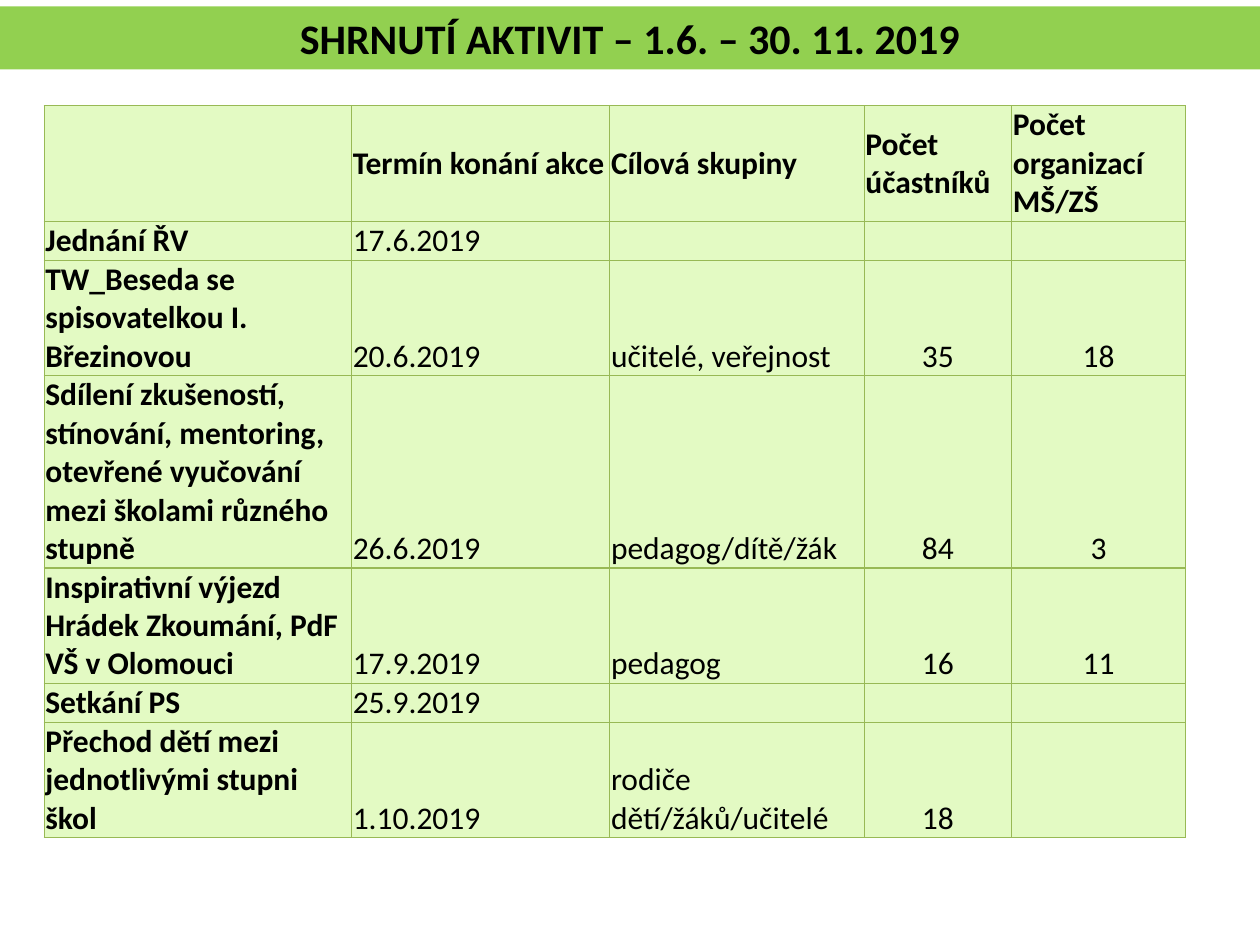
from lxml.etree import SubElement
from pptx import Presentation
from pptx.dml.color import RGBColor
from pptx.enum.text import MSO_ANCHOR as ANCHOR, MSO_AUTO_SIZE as AUTO, PP_ALIGN as ALIGN
from pptx.oxml.ns import qn
from pptx.util import Inches, Pt

# Content
TITLE = "SHRNUTÍ AKTIVIT – 1.6. – 30. 11. 2019"
HEADER = ("", "Termín konání akce", "Cílová skupiny", "Počet účastníků",
          "Počet organizací MŠ/ZŠ")
ACTIVITIES = [
    ("Jednání ŘV", "17.6.2019", "", "", ""),
    ("TW_Beseda se spisovatelkou I. Březinovou", "20.6.2019",
     "učitelé, veřejnost", "35", "18"),
    ("Sdílení zkušeností, stínování, mentoring, otevřené vyučování mezi školami "
     "různého stupně", "26.6.2019", "pedagog/dítě/žák", "84", "3"),
    ("Inspirativní výjezd Hrádek Zkoumání, PdF VŠ v Olomouci", "17.9.2019",
     "pedagog", "16", "11"),
    ("Setkání PS", "25.9.2019", "", "", ""),
    ("Přechod dětí mezi jednotlivými stupni škol", "1.10.2019",
     "rodiče dětí/žáků/učitelé", "18", ""),
]
COL_WIDTHS = (2.44, 2.05, 2.02, 1.17, 1.38)
ROW_LINES = (3, 1, 3, 5, 3, 1, 3)
LINE_HEIGHT, ROW_PAD = 0.3, 0.01
FONT = "Calibri"
BANNER, CELL, BORDER, TEXT = "92D050", "E3FAC3", "98B955", "000000"


def color(hex_code):
    return RGBColor.from_string(hex_code)


def write(tf, text, size=18, bold=False, align=ALIGN.LEFT):
    p = tf.paragraphs[0]
    p.alignment = align
    if not text:
        return
    r = p.add_run()
    r.text = text
    r.font.name, r.font.size, r.font.bold = FONT, Pt(size), bold
    r.font.color.rgb = color(TEXT)


def paint(target, hex_code):
    target.fill.solid()
    target.fill.fore_color.rgb = color(hex_code)


def add_borders(cell, hex_code, width=0.75):
    tc_pr = cell._tc.get_or_add_tcPr()
    for i, side in enumerate(("lnL", "lnR", "lnT", "lnB")):
        ln = SubElement(tc_pr, qn("a:" + side), w=str(Pt(width)))
        SubElement(SubElement(ln, qn("a:solidFill")), qn("a:srgbClr"), val=hex_code)
        tc_pr.insert(i, ln)  # borders come before the fill


prs = Presentation()
prs.slide_width, prs.slide_height = Inches(10), Inches(7.5)
s = prs.slides.add_slide(prs.slide_layouts[5])

# Title banner
title = s.shapes.title
title.left, title.top = Inches(0), Inches(0.05)
title.width, title.height = Inches(10), Inches(0.5)
paint(title, BANNER)
tf = title.text_frame
tf.word_wrap, tf.auto_size = True, AUTO.NONE
tf.vertical_anchor = ANCHOR.MIDDLE
write(tf, TITLE, size=24, bold=True, align=ALIGN.CENTER)

# Table of activities
rows = [HEADER] + ACTIVITIES
heights = [n * LINE_HEIGHT + ROW_PAD for n in ROW_LINES]
table = s.shapes.add_table(len(rows), len(COL_WIDTHS), Inches(0.35), Inches(0.84),
                           Inches(sum(COL_WIDTHS)), Inches(sum(heights))).table
table.horz_banding = False
for column, width in zip(table.columns, COL_WIDTHS):
    column.width = Inches(width)
for row, height in zip(table.rows, heights):
    row.height = Inches(height)

for i, texts in enumerate(rows):
    for j, text in enumerate(texts):
        cell = table.cell(i, j)
        cell.margin_left = cell.margin_right = Inches(0.01)
        cell.margin_top = cell.margin_bottom = 0
        cell.vertical_anchor = ANCHOR.BOTTOM if i else ANCHOR.MIDDLE
        paint(cell, CELL)
        add_borders(cell, BORDER)
        write(cell.text_frame, text, bold=i == 0 or j == 0,
              align=ALIGN.CENTER if i and j > 2 else ALIGN.LEFT)

prs.save("out.pptx")
